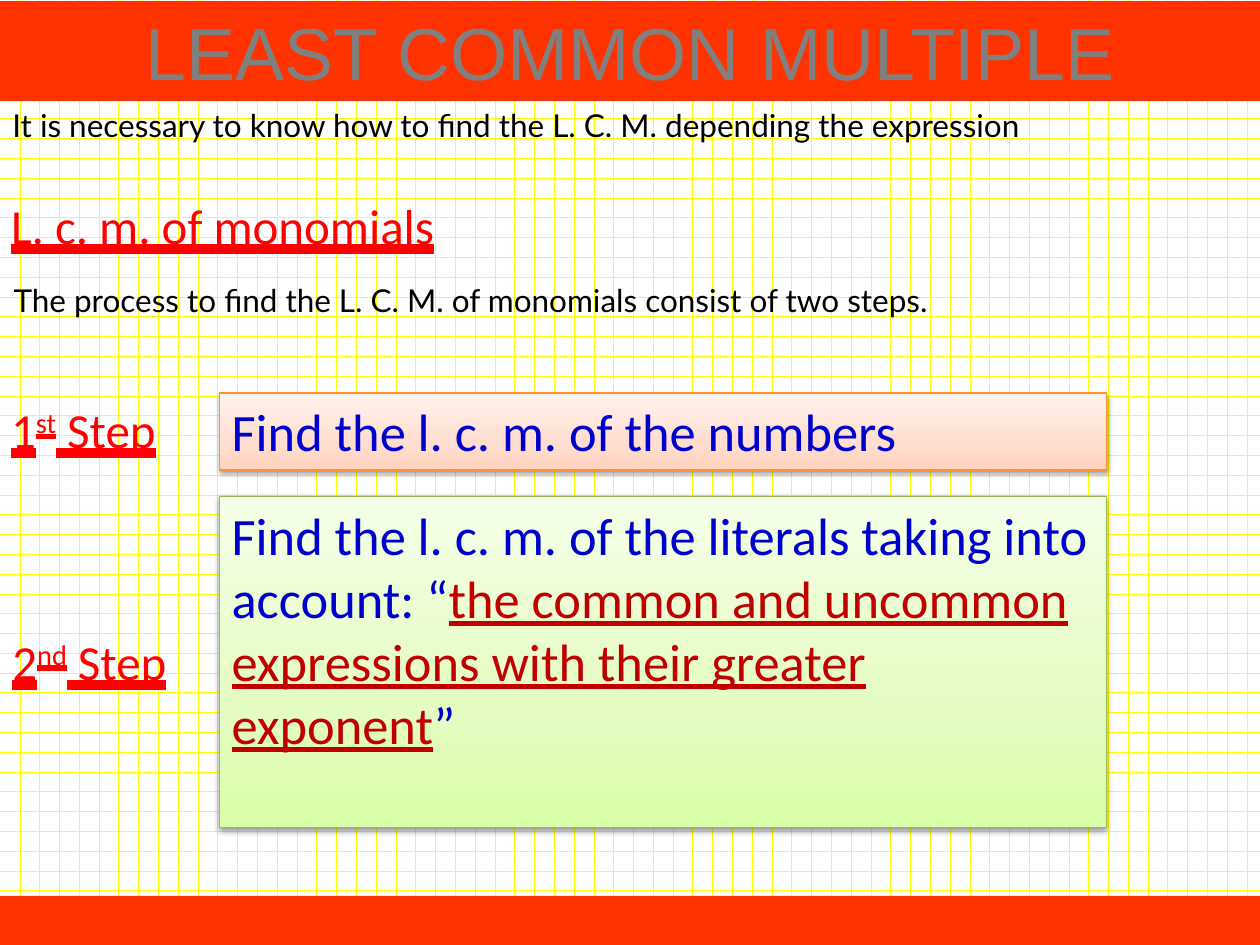
from copy import deepcopy
from dataclasses import dataclass

from lxml import etree
from pptx import Presentation
from pptx.dml.color import RGBColor
from pptx.enum.dml import MSO_PATTERN
from pptx.enum.shapes import MSO_SHAPE
from pptx.enum.text import MSO_ANCHOR, MSO_AUTO_SIZE, MSO_UNDERLINE, PP_ALIGN
from pptx.oxml import parse_xml
from pptx.oxml.ns import nsdecls, qn
from pptx.util import Inches, Pt

RECTANGLE = MSO_SHAPE.RECTANGLE
HEAVY = MSO_UNDERLINE.HEAVY_LINE
SINGLE = MSO_UNDERLINE.SINGLE_LINE
TITLE_ONLY = 5


@dataclass(frozen=True)
class Theme:
    bar: str = "FF3300"
    grid: str = "FFFF00"
    paper: str = "FFFFFF"
    title: str = "808080"
    body: str = "000000"
    heading: str = "FF0000"
    rule: str = "0000CC"
    emphasis: str = "C00000"
    orange: tuple = ("FFD2BD", "FFDED0", "FFF2ED")
    orange_line: str = "F69240"
    green: tuple = ("DAFDA7", "E4FCC2", "F5FFE7")
    green_line: str = "98B955"
    stops: tuple = (0, 0.35, 1)
    title_font: str = "Arial"
    body_font: str = "Lato"
    step_font: str = "Calibri"
    title_size: int = 42
    body_size: int = 18
    heading_size: int = 28
    rule_size: int = 30


THEME = Theme()


def color(code):
    return RGBColor.from_string(code)


def style(span, font, size, code, underline=None):
    span.font.name = font
    span.font.size = Pt(size)
    span.font.color.rgb = color(code)
    span.font.underline = underline


def set_background(page):
    fill = page.background.fill
    fill.patterned()
    fill.pattern = MSO_PATTERN.DOTTED_GRID
    fill.fore_color.rgb = color(THEME.grid)
    fill.back_color.rgb = color(THEME.paper)


def add_bar(page, top, height):
    bar = page.shapes.add_shape(RECTANGLE, 0, Inches(top), Inches(10), Inches(height))
    bar.shadow.inherit = False
    bar.fill.solid()
    bar.fill.fore_color.rgb = color(THEME.bar)
    bar.line.fill.background()


def set_title(page, text):
    title = page.shapes.title
    title.left, title.top = 0, Inches(0.01)
    title.width, title.height = Inches(10), Inches(0.79)
    title.fill.solid()
    title.fill.fore_color.rgb = color(THEME.bar)
    frame = title.text_frame
    frame.text = text
    frame.auto_size = MSO_AUTO_SIZE.NONE
    frame.vertical_anchor = MSO_ANCHOR.MIDDLE
    para = frame.paragraphs[0]
    para.alignment = PP_ALIGN.CENTER
    span = para.runs[0]
    style(span, THEME.title_font, THEME.title_size, THEME.title)
    # Thin white outline around the letters
    span.font._element.insert(0, parse_xml(
        f'<a:ln {nsdecls("a")} w="{Pt(0.75)}"><a:solidFill>'
        f'<a:srgbClr val="{THEME.paper}"/></a:solidFill></a:ln>'))


def add_text(page, left, top, width, height):
    box = page.shapes.add_textbox(Inches(left), Inches(top), Inches(width), Inches(height))
    box.text_frame.word_wrap = True
    return box.text_frame.paragraphs[0]


def add_body(page, left, top, text):
    para = add_text(page, left, top, 10, 0.71)
    para.text = text
    style(para.runs[0], THEME.body_font, THEME.body_size, THEME.body)


def add_heading(page, left, top, width, parts):
    """Write an underlined heading; every second part is a superscript."""
    para = add_text(page, left, top, width, 0.57)
    for index, text in enumerate(parts):
        span = para.add_run()
        span.text = text
        style(span, THEME.step_font, THEME.heading_size, THEME.heading, HEAVY)
        if index % 2:
            span.font._element.set("baseline", "30000")


def fill_gradient(shape, codes):
    shape.fill.gradient()
    shape.fill.gradient_angle = 90
    stop_list = shape._element.spPr.find(qn("a:gradFill")).find(qn("a:gsLst"))
    stop_list.insert(1, deepcopy(stop_list[0]))
    for stop, position, code in zip(shape.fill.gradient_stops, THEME.stops, codes):
        stop.position = position
        stop.color.rgb = color(code)


def add_shadow(shape):
    shape.shadow.inherit = False
    effects = shape._element.spPr.find(qn("a:effectLst"))
    shadow = etree.SubElement(effects, qn("a:outerShdw"), blurRad="40000",
                              dist="20000", dir="5400000", rotWithShape="0")
    black = etree.SubElement(shadow, qn("a:srgbClr"), val="000000")
    etree.SubElement(black, qn("a:alpha"), val="38000")


def add_rule(page, top, height, gradient, line, parts):
    """Draw a step's panel; every second part of its text is emphasised."""
    panel = page.shapes.add_shape(RECTANGLE, Inches(1.74), Inches(top),
                                  Inches(7.04), Inches(height))
    fill_gradient(panel, gradient)
    panel.line.color.rgb = color(line)
    panel.line.width = Pt(0.75)
    add_shadow(panel)
    frame = panel.text_frame
    frame.word_wrap = True
    frame.vertical_anchor = MSO_ANCHOR.TOP
    para = frame.paragraphs[0]
    para.alignment = PP_ALIGN.LEFT
    for index, text in enumerate(parts):
        span = para.add_run()
        span.text = text
        code, underline = (THEME.emphasis, SINGLE) if index % 2 else (THEME.rule, None)
        style(span, THEME.step_font, THEME.rule_size, code, underline)


def main():
    deck = Presentation()
    deck.slide_width, deck.slide_height = Inches(10), Inches(7.5)
    page = deck.slides.add_slide(deck.slide_layouts[TITLE_ONLY])

    # Frame of the page
    set_background(page)
    add_bar(page, 7.11, 0.39)
    set_title(page, "LEAST COMMON MULTIPLE")

    # Introduction
    add_body(page, 0, 0.79,
             "It is necessary to know how to find the L. C. M. depending the expression")
    add_heading(page, -0.01, 1.5, 4.37, ["L. c. m. of monomials"])
    add_body(page, 0.01, 2.18,
             "The process to find the L. C. M. of monomials consist of two steps.")

    # The two steps
    add_heading(page, -0.01, 3.12, 1.66, ["1", "st", " Step"])
    add_rule(page, 3.12, 0.61, THEME.orange, THEME.orange_line,
             ["Find the l. c. m. of the numbers"])
    add_heading(page, 0, 4.96, 1.74, ["2", "nd", " Step"])
    add_rule(page, 3.94, 2.63, THEME.green, THEME.green_line,
             ["Find the l. c. m. of the literals taking into account: “",
              "the common and uncommon expressions with their greater exponent",
              "”"])

    deck.save("out.pptx")


if __name__ == "__main__":
    main()
